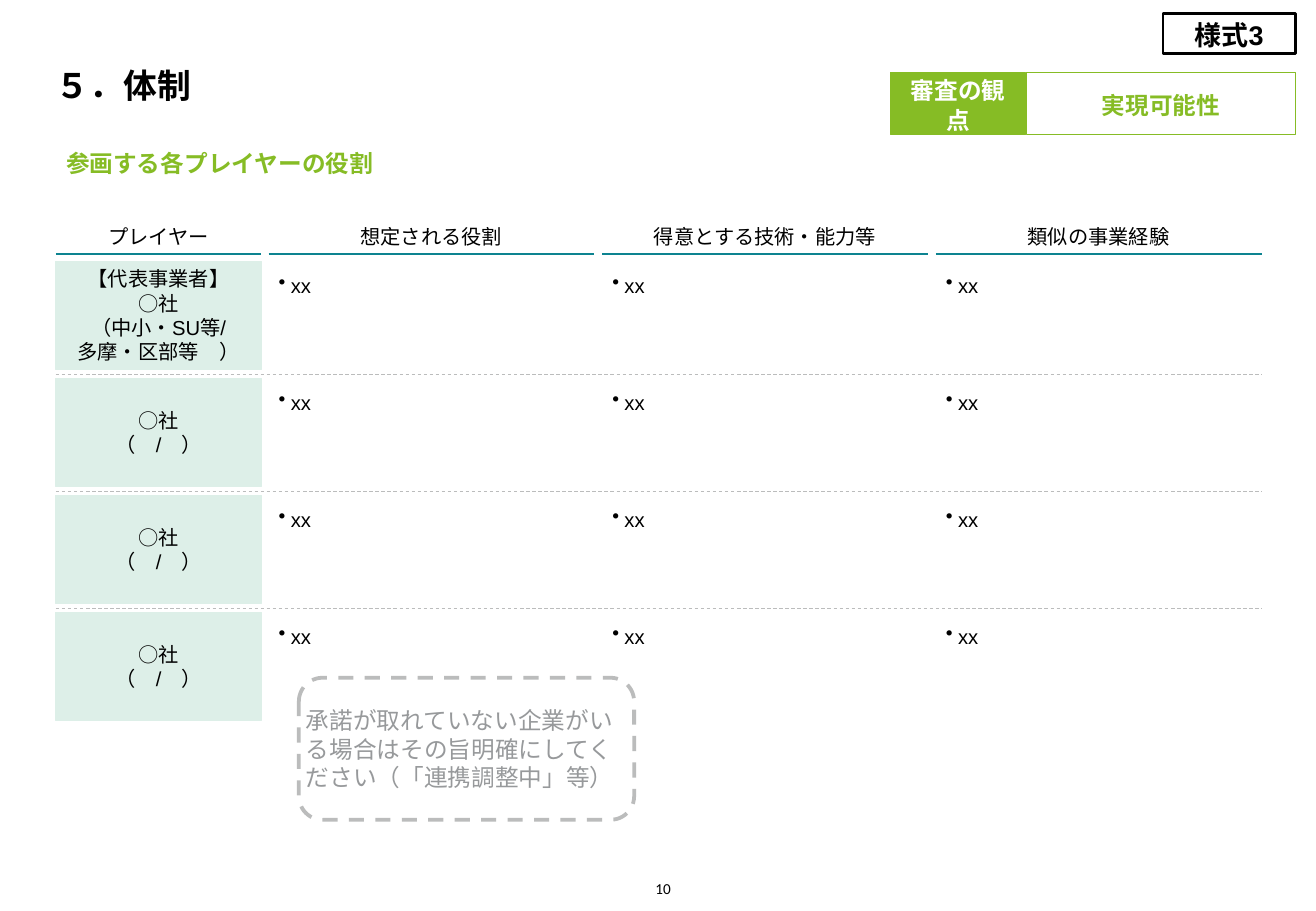
from lxml.etree import SubElement
from pptx import Presentation
from pptx.dml.color import RGBColor as RGB
from pptx.enum.dml import MSO_LINE as Dash
from pptx.enum.shapes import MSO_CONNECTOR as Conn, MSO_SHAPE as Shape
from pptx.enum.text import MSO_ANCHOR as Anchor, PP_ALIGN as Align
from pptx.oxml.ns import qn
from pptx.util import Inches, Pt

BLACK = RGB(0x00, 0x00, 0x00)
WHITE = RGB(0xFF, 0xFF, 0xFF)
GREEN = RGB(0x86, 0xBC, 0x25)
TEAL = RGB(0x0D, 0x83, 0x90)
MINT = RGB(0xDD, 0xEF, 0xE8)
SILVER = RGB(0xBB, 0xBC, 0xBC)
GRAY = RGB(0x97, 0x99, 0x9B)

LEFT, RIGHT = 4.25, 95.86
COLUMNS = [(LEFT, 15.6)] + [(20.41 + 25.35 * i, 24.75) for i in range(3)]
ROW_TOP, ROW_STEP, ROW_HEIGHT = 28.67, 12.85, 11.87
HEADERS = ["プレイヤー", "想定される役割", "得意とする技術・能力等", "類似の事業経験"]
MEMBER = ["○社\n（　/　）"]
PLAYERS = [["【代表事業者】\n○社\n（中小・SU等/", "多摩・区部等　）"]] + [MEMBER] * 3


class Sheet:
    """Draws styled elements on one slide, with lengths in percent of its size."""

    def __init__(self, prs):
        self.prs = prs
        self.s = prs.slides.add_slide(prs.slide_layouts[6])

    def place(self, x, y):
        return int(self.prs.slide_width * x / 100), int(self.prs.slide_height * y / 100)

    def fill_text(self, sp, paras, size=12, color=BLACK, bold=False, font="Arial",
                  align=Align.CENTER, anchor=Anchor.MIDDLE, pad=6, spacing=None,
                  bullet=False, wrap=True):
        tf = sp.text_frame
        tf.word_wrap = wrap
        tf.vertical_anchor = anchor
        tf.margin_left = tf.margin_right = tf.margin_top = tf.margin_bottom = Pt(pad)
        for i, text in enumerate(paras):
            p = tf.add_paragraph() if i else tf.paragraphs[0]
            p.alignment = align
            p.line_spacing = spacing
            if bullet:
                pPr = p._p.get_or_add_pPr()
                pPr.set("marL", str(Inches(0.1)))
                pPr.set("indent", str(-Inches(0.1)))
                SubElement(pPr, qn("a:buChar")).set("char", "•")
            for j, line in enumerate(text.split("\n")):
                if j:
                    p.add_line_break()
                r = p.add_run()
                r.text = line
                r.font.name, r.font.size, r.font.bold = font, Pt(size), bold
                r.font.color.rgb = color

    def text(self, x, y, w, h, paras, **style):
        sp = self.s.shapes.add_textbox(*self.place(x, y), *self.place(w, h))
        self.fill_text(sp, paras, **style)
        return sp

    def box(self, x, y, w, h, paras, fill, line, width=0.5, kind=Shape.RECTANGLE,
            dash=None, **style):
        sp = self.s.shapes.add_shape(kind, *self.place(x, y), *self.place(w, h))
        sp.shadow.inherit = False
        sp.fill.solid()
        sp.fill.fore_color.rgb = fill
        self.stroke(sp, line, width, dash)
        self.fill_text(sp, paras, **style)

    def rule(self, x, y, w, color, width, dash=None):
        c = self.s.shapes.add_connector(Conn.STRAIGHT, *self.place(x, y), *self.place(x + w, y))
        self.stroke(c, color, width, dash)
        SubElement(c._element.spPr, qn("a:effectLst"))

    def stroke(self, sp, color, width, dash):
        sp.line.color.rgb = color
        sp.line.width = Pt(width)
        if dash:
            sp.line.dash_style = dash


def main():
    prs = Presentation()
    prs.slide_width, prs.slide_height = Inches(10.83), Inches(7.5)
    s = Sheet(prs)

    s.text(LEFT, 2.67, 91.6, 8.93, ["５．体制"], size=20, bold=True, font="Calibri",
           align=Align.LEFT, anchor=Anchor.BOTTOM, pad=0)
    subtitle = s.text(LEFT, 14.8, 43.95, 6.27, ["参画する各プレイヤーの役割"], size=14,
                      color=GREEN, bold=True, font="Calibri", align=Align.LEFT,
                      pad=0, wrap=False)
    subtitle.text_frame.margin_left = Pt(6)
    s.box(88.37, 1.47, 10.06, 4.4, ["様式3"], WHITE, BLACK, 1.5, size=16, bold=True,
          spacing=1.06)
    for x, w, label, fill, color in [(78.02, 20.41, "実現可能性", WHITE, GREEN),
                                     (67.68, 10.25, "審査の観点", GREEN, WHITE)]:
        s.box(x, 8, w, 6.8, [label], fill, GREEN, size=14, color=color, bold=True,
              spacing=1.06)

    for (x, w), header in zip(COLUMNS, HEADERS):
        s.text(x, 23.73, w, 4.13, [header], anchor=Anchor.BOTTOM, pad=3, spacing=1.06)
        s.rule(x, 27.87, w, TEAL, 1.5)

    for i, player in enumerate(PLAYERS):
        y = ROW_TOP + ROW_STEP * i
        if i:
            s.rule(LEFT, y - 0.45, RIGHT - LEFT, SILVER, 0.5, Dash.DASH)
        (x, w), *details = COLUMNS
        s.box(x, y, w, ROW_HEIGHT, player, MINT, MINT)
        for x, w in details:
            s.text(x, y, w, ROW_HEIGHT, ["xx"], align=Align.LEFT, anchor=Anchor.TOP,
                   spacing=1.06, bullet=True)

    s.box(22.71, 74.4, 25.48, 15.6,
          ["承諾が取れていない企業がいる場合はその旨明確にしてください（「連携調整中」等）"],
          WHITE, SILVER, 2.25, Shape.ROUNDED_RECTANGLE, Dash.DASH, size=14, color=GRAY,
          font="Calibri", align=Align.LEFT, pad=0)
    s.text(49.12, 96, 1.85, 2.53, ["10"], size=9, font="Calibri", align=Align.RIGHT,
           anchor=Anchor.BOTTOM, pad=0, wrap=False)

    prs.save("out.pptx")


if __name__ == "__main__":
    main()
